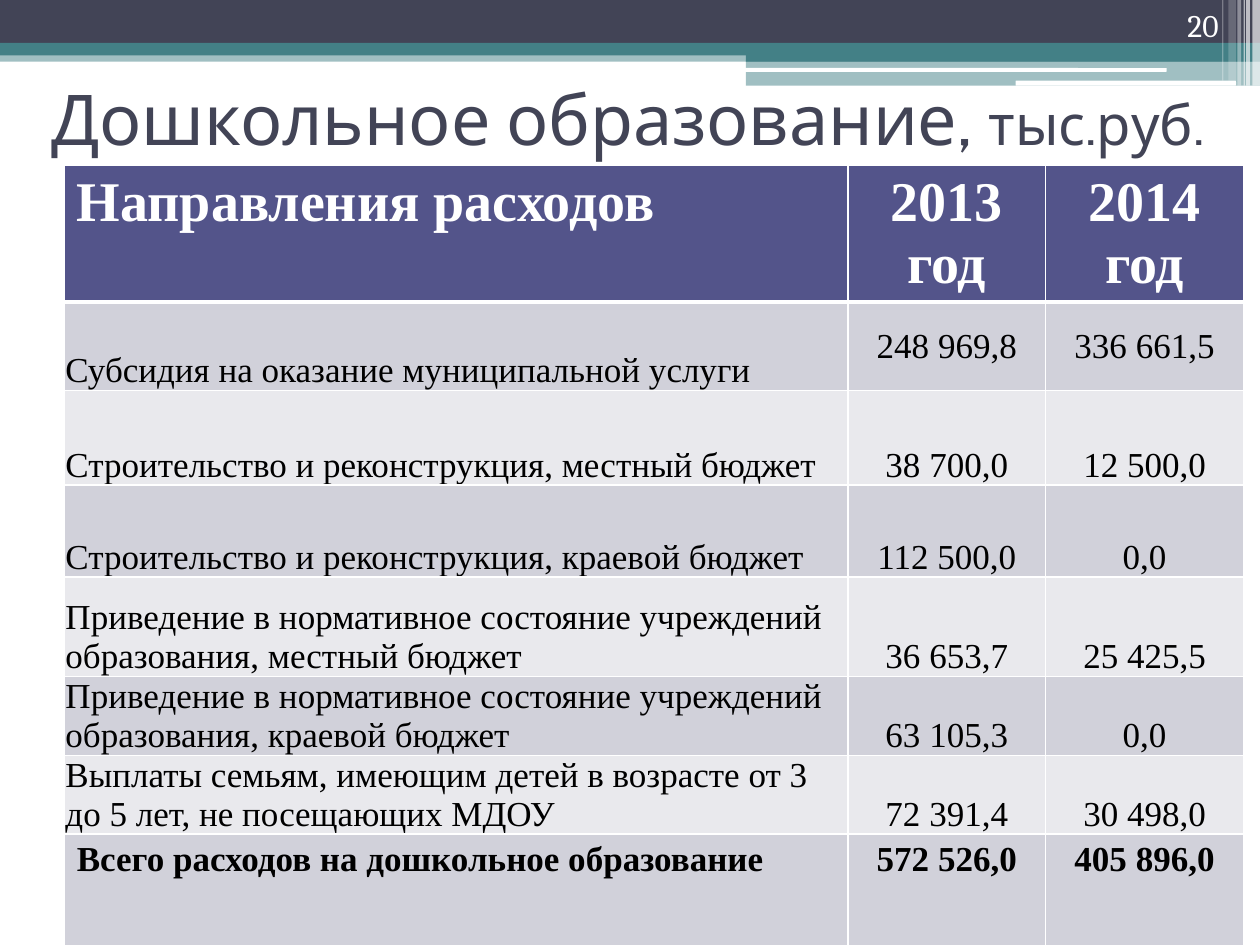
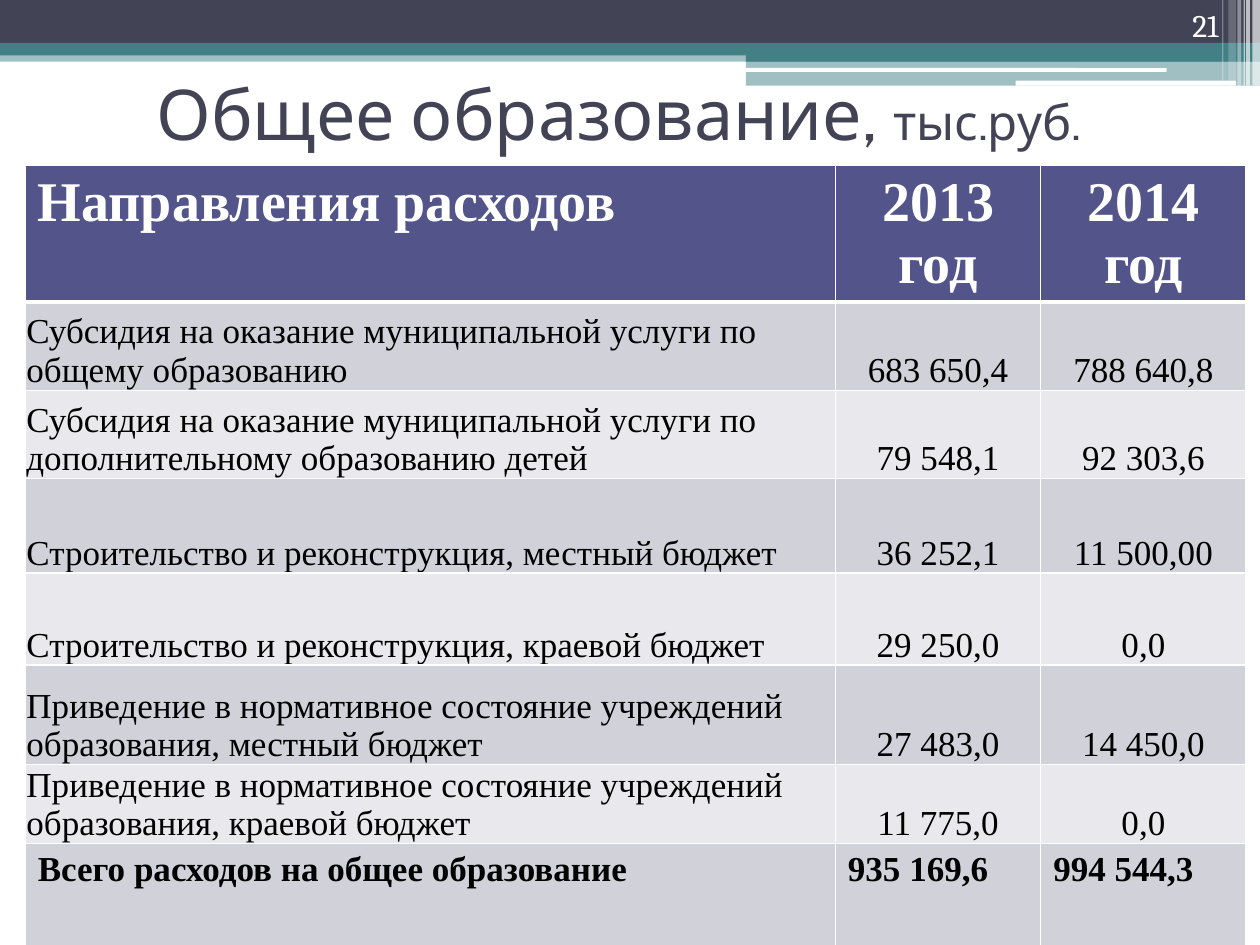
from lxml import etree
from pptx import Presentation
from pptx import util as u
from pptx.dml.color import RGBColor
from pptx.enum import shapes, text
from pptx.oxml import ns

INK = {"navy": "424456", "teal": "438086", "white": "FFFFFF", "black": "000000",
       "head": "53548A", "dark": "D1D1DA", "light": "E9E9ED"}
LEFT, MID, RIGHT = text.PP_ALIGN.LEFT, text.PP_ALIGN.CENTER, text.PP_ALIGN.RIGHT
TOP, CENTRE, BASE = (text.MSO_ANCHOR.TOP, text.MSO_ANCHOR.MIDDLE,
                     text.MSO_ANCHOR.BOTTOM)
RECT, ROUND = shapes.MSO_SHAPE.RECTANGLE, shapes.MSO_SHAPE.ROUNDED_RECTANGLE

HEAD = {"size": 32, "name": "Times New Roman", "bold": True, "color": "white"}
BODY = {**HEAD, "size": 20, "bold": False, "color": "black"}
TOTAL = {**BODY, "bold": True}
TITLE = {"size": 40, "name": "Cabin", "color": "navy"}
PAGE = {"size": 18, "name": "Cambria", "color": "white"}

TIGHT = {"margin_left": 0.01, "margin_top": 0.01, "margin_right": 0.01,
         "margin_bottom": 0}

# kind, left, top, width, height, colour, opacity in percent
BANDS = [
    (RECT, 0, 0.4, 10, 0.09, "teal", 50),
    (RECT, 0, 0, 10, 0.34, "navy", 100),
    (RECT, 0, 0.34, 10, 0.1, "teal", 100),
    (RECT, 5.92, 0.39, 4.08, 0.1, "teal", 100),
    (RECT, 5.92, 0.48, 4.08, 0.2, "teal", 50),
    (ROUND, 5.91, 0.54, 3.35, 0.03, "white", 100),
    (ROUND, 8.06, 0.64, 1.75, 0.04, "white", 100),
]
# left, width, height, opacity of the upright stripes at the right edge
STRIPES = [(9.94, 0.06, 0.68, 65), (9.89, 0.03, 0.68, 65), (9.87, 0.01, 0.68, 60),
           (9.82, 0.03, 0.68, 40), (9.75, 0.06, 0.64, 20), (9.7, 0.01, 0.64, 30)]

BUILD = "Строительство и реконструкция, "
REPAIR = "Приведение в нормативное состояние учреждений образования, "
GRANT = "Субсидия на оказание муниципальной услуги"
LOCAL, REGION = "местный бюджет", "краевой бюджет"
HEADS = ("Направления расходов", "2013 год", "2014 год")

# row height, label, 2013, 2014
NURSERY = [
    (0.41, *HEADS),
    (0.7, GRANT, "248 969,8", "336 661,5"),
    (0.75, BUILD + LOCAL, "38 700,0", "12 500,0"),
    (0.73, BUILD + REGION, "112 500,0", "0,0"),
    (0.79, REPAIR + LOCAL, "36 653,7", "25 425,5"),
    (0.57, REPAIR + REGION, "63 105,3", "0,0"),
    (0.57, "Выплаты семьям, имеющим детей в возрасте от 3 до 5 лет, "
           "не посещающих МДОУ", "72 391,4", "30 498,0"),
    (0.9, "Всего расходов на дошкольное образование", "572 526,0", "405 896,0"),
]
SCHOOL = [
    (0.41, *HEADS),
    (0.7, GRANT + " по общему образованию", "683 650,4", "788 640,8"),
    (0.7, GRANT + " по дополнительному образованию детей", "79 548,1", "92 303,6"),
    (0.75, BUILD + LOCAL, "36 252,1", "11 500,00"),
    (0.73, BUILD + REGION, "29 250,0", "0,0"),
    (0.79, REPAIR + LOCAL, "27 483,0", "14 450,0"),
    (0.57, REPAIR + REGION, "11 775,0", "0,0"),
    (0.9, "Всего расходов на общее образование", "935 169,6", "994 544,3"),
]


def rgb(key):
    return RGBColor.from_string(INK[key])


def inch(*sizes):
    return [u.Inches(s) for s in sizes]


def style(font, form):
    for key, val in form.items():
        if key == "color":
            font.color.rgb = rgb(val)
        else:
            setattr(font, key, u.Pt(val) if key == "size" else val)


def write(frame, runs, align, anchor):
    """Fill a text frame with one paragraph of (words, format) runs."""
    frame.word_wrap = True
    frame.vertical_anchor = anchor
    para = frame.paragraphs[0]
    para.alignment = align
    for words, form in runs:
        run = para.add_run()
        run.text = words
        style(run.font, form)


def band(slide, kind, box, color, alpha):
    shape = slide.shapes.add_shape(kind, *inch(*box))
    shape.shadow.inherit = False
    shape.line.fill.background()
    shape.fill.solid()
    shape.fill.fore_color.rgb = rgb(color)
    if alpha < 100:
        tint = shape.element.spPr.find(".//" + ns.qn("a:srgbClr"))
        etree.SubElement(tint, ns.qn("a:alpha"), val=str(alpha * 1000))
    return shape


def dress(layout, slide):
    """Draw the shared bands and move them to the back of the layout."""
    parts = BANDS + [(RECT, x, 0, w, h, "white", a) for x, w, h, a in STRIPES]
    tree = layout.shapes.element
    for i, (kind, *box, color, alpha) in enumerate(parts):
        node = band(slide, kind, box, color, alpha).element
        node.nvSpPr.cNvPr.set("id", str(100 + i))
        tree.insert(2 + i, node)


def edge(cell, **sides):
    """Draw white cell borders; each side maps to a width in points."""
    props = cell._tc.get_or_add_tcPr()
    for side, width in sides.items():
        line = etree.SubElement(props, ns.qn("a:ln" + side), w=str(u.Pt(width)))
        fill = etree.SubElement(line, ns.qn("a:solidFill"))
        etree.SubElement(fill, ns.qn("a:srgbClr"), val=INK["white"])


def paint(cell, color):
    cell.fill.solid()
    cell.fill.fore_color.rgb = rgb(color)


def costs(slide, box, cols, rows, sums, lift):
    """Add the table; sums aligns the totals, lift anchors the first figures."""
    frame = slide.shapes.add_table(len(rows), len(cols), *inch(*box))
    grid = frame.table
    for col, width in zip(grid.columns, cols):
        col.width = u.Inches(width)
    last = len(rows) - 1
    for r, (high, *words) in enumerate(rows):
        grid.rows[r].height = u.Inches(high)
        form = {0: HEAD, last: TOTAL}.get(r, BODY)
        for c, word in enumerate(words):
            cell = grid.cell(r, c)
            edge(cell, L=1, R=1, T=3 if r == 1 else 1, B=1 if r else 3)
            paint(cell, ("light", "dark")[r % 2] if r else "head")
            anchor = TOP
            if form is BODY:
                anchor = lift if r == 1 and c else BASE
                for key, val in TIGHT.items():
                    setattr(cell, key, u.Inches(val))
            align = LEFT if c == 0 else sums if r == last else MID
            write(cell.text_frame, [(word, form)], align, anchor)
            cell.vertical_anchor = anchor
    frame.height = u.Inches(box[3])


def title(slide, box, words, unit, size):
    head = slide.shapes.title
    head.left, head.top, head.width, head.height = inch(*box)
    head.text_frame.auto_size = text.MSO_AUTO_SIZE.NONE
    runs = [(words + ", ", TITLE), (unit, {**TITLE, "size": size})]
    write(head.text_frame, runs, MID, CENTRE)


def number(slide, page):
    box = slide.shapes.add_textbox(*inch(8.94, 0, 0.83, 0.4))
    write(box.text_frame, [(str(page), PAGE)], RIGHT, BASE)


def main():
    deck = Presentation()
    deck.slide_width, deck.slide_height = inch(10, 7.5)
    layout = deck.slide_layouts.get_by_name("Title Only")
    first, second = [deck.slides.add_slide(layout) for _ in range(2)]
    dress(layout, first)

    title(first, (0.2, 0.52, 9.57, 0.83), "Дошкольное образование", "тыс.руб.", 32)
    costs(first, (0.51, 1.31, 9.37, 5.63), (6.22, 1.57, 1.57), NURSERY, MID, CENTRE)
    number(first, 20)

    title(second, (0.47, 0.48, 8.89, 0.83), "Общее образование", "тыс.руб.", 28)
    costs(second, (0.2, 1.31, 9.69, 5.65), (6.43, 1.63, 1.63), SCHOOL, LEFT, BASE)
    number(second, 21)
    deck.save("out.pptx")


if __name__ == "__main__":
    main()
